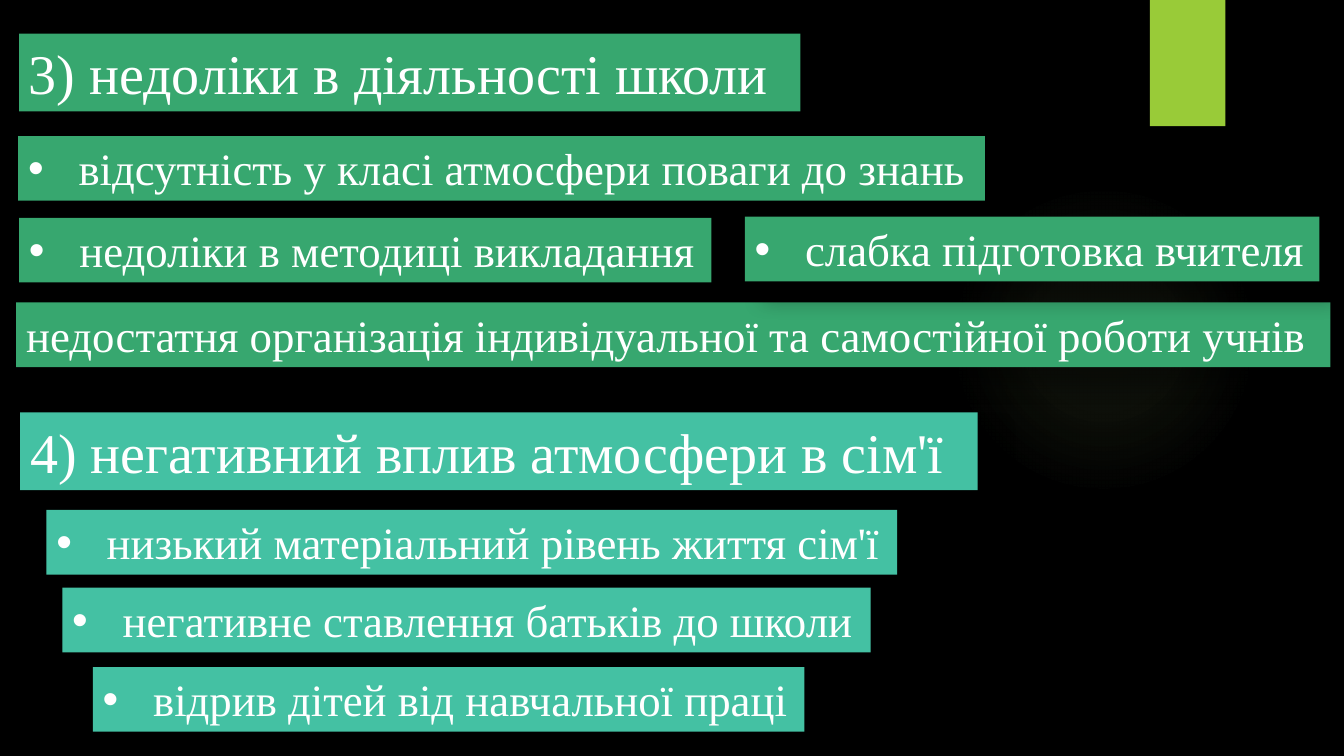
from lxml import etree
from pptx import Presentation
from pptx.dml.color import RGBColor
from pptx.enum.shapes import MSO_SHAPE
from pptx.enum.text import MSO_ANCHOR, PP_ALIGN
from pptx.oxml import parse_xml
from pptx.oxml.ns import nsdecls, qn
from pptx.util import Cm, Pt

RECT, OVAL = MSO_SHAPE.RECTANGLE, MSO_SHAPE.OVAL
TOP, LEFT = MSO_ANCHOR.TOP, PP_ALIGN.LEFT

# Content: style, text, left, top, width (cm), from back to front
SCHOOL = [
    ("head", "3) недоліки в діяльності школи", 0.48, 0.85, 19.69),
    ("bullet", "відсутність у класі атмосфери поваги до знань", 0.46, 3.43, 24.36),
    ("bullet", "недоліки в методиці викладання", 0.48, 5.49, 17.45),
    ("plain", "недостатня організація індивідуальної та самостійної роботи учнів",
     0.41, 7.62, 33.12),
    ("bullet", "слабка підготовка вчителя", 18.77, 5.46, 14.48),
]
FAMILY = [
    ("head", "4) негативний вплив атмосфери в сім'ї", 0.51, 10.39, 24.13),
    ("bullet", "низький матеріальний рівень життя сім'ї", 1.17, 12.85, 21.44),
    ("bullet", "негативне ставлення батьків до школи", 1.57, 14.81, 20.37),
    ("bullet", "відрив дітей від навчальної праці", 2.34, 16.81, 17.93),
]
GLOW = (23.9, 4.65, 7.82, 7.82)
TAB = (28.98, 0, 1.9, 3.18)

THEME = {
    "back": "000000", "text": "FFFFFF", "tab": "99CB38", "glow": "C2E088",
    "school": "37A76F", "family": "44C1A3", "font": "Times New Roman",
    "size": {"head": 40, "bullet": 32, "plain": 32},
    "high": {"head": 1.96, "bullet": 1.63, "plain": 1.63},
}
FRAME = {"word_wrap": True, "vertical_anchor": TOP}
FONT = {"name": THEME["font"]}
INDENT = Cm(1.27)


def color(key):
    return RGBColor.from_string(THEME[key])


def apply(target, values):
    for name, value in values.items():
        setattr(target, name, value)


def add_box(slide, kind, place):
    shape = slide.shapes.add_shape(kind, *map(Cm, place))
    shape.shadow.inherit = False
    shape.line.fill.background()
    return shape


def add_shadow(shape, alpha, blur, dist, angle):
    shape.shadow.inherit = False
    effects = shape.element.spPr.find(qn("a:effectLst"))
    effects.append(parse_xml(
        f'<a:outerShdw {nsdecls("a")} blurRad="{Pt(blur)}" dist="{Pt(dist)}" '
        f'dir="{angle * 60000}" algn="tl" rotWithShape="0"><a:srgbClr val="000000">'
        f'<a:alpha val="{alpha * 1000}"/></a:srgbClr></a:outerShdw>'))


def add_glow(slide):
    shape = add_box(slide, OVAL, GLOW)
    stops = "".join(
        f'<a:gs pos="{pos * 1000}"><a:srgbClr val="{THEME["glow"]}">'
        f'<a:alpha val="{alpha * 1000}"/></a:srgbClr></a:gs>'
        for pos, alpha in [(0, 7), (36, 6), (69, 0)])
    grad = parse_xml(
        f'<a:gradFill {nsdecls("a")}><a:gsLst>{stops}</a:gsLst><a:path path="circle">'
        '<a:fillToRect l="50000" t="50000" r="50000" b="50000"/></a:path></a:gradFill>')
    shape.element.spPr.find(qn("a:prstGeom")).addnext(grad)


def add_label(slide, fill, style, text, left, top, width):
    shape = add_box(slide, RECT, (left, top, width, THEME["high"][style]))
    shape.fill.solid()
    shape.fill.fore_color.rgb = color(fill)
    add_shadow(shape, 30, 15, 18, 45)
    apply(shape.text_frame, FRAME)
    para = shape.text_frame.paragraphs[0]
    para.alignment = LEFT
    if style == "bullet":
        props = para._p.get_or_add_pPr()
        props.set("marL", str(INDENT))
        props.set("indent", str(-INDENT))
        etree.SubElement(props, qn("a:buFont")).set("typeface", "Arial")
        etree.SubElement(props, qn("a:buChar")).set("char", "•")
    run = para.add_run()
    run.text = text
    apply(run.font, {**FONT, "size": Pt(THEME["size"][style])})
    run.font.color.rgb = color("text")


def main():
    deck = Presentation()
    apply(deck, {"slide_width": Cm(33.87), "slide_height": Cm(19.05)})
    slide = deck.slides.add_slide(deck.slide_layouts[6])
    slide.background.fill.solid()
    slide.background.fill.fore_color.rgb = color("back")

    # Backdrop
    add_glow(slide)
    tab = add_box(slide, RECT, TAB)
    tab.fill.solid()
    tab.fill.fore_color.rgb = color("tab")
    add_shadow(tab, 45, 3, 2, 90)

    # Labels of both groups
    for fill, group in [("school", SCHOOL), ("family", FAMILY)]:
        for label in group:
            add_label(slide, fill, *label)

    deck.save("out.pptx")


if __name__ == "__main__":
    main()
